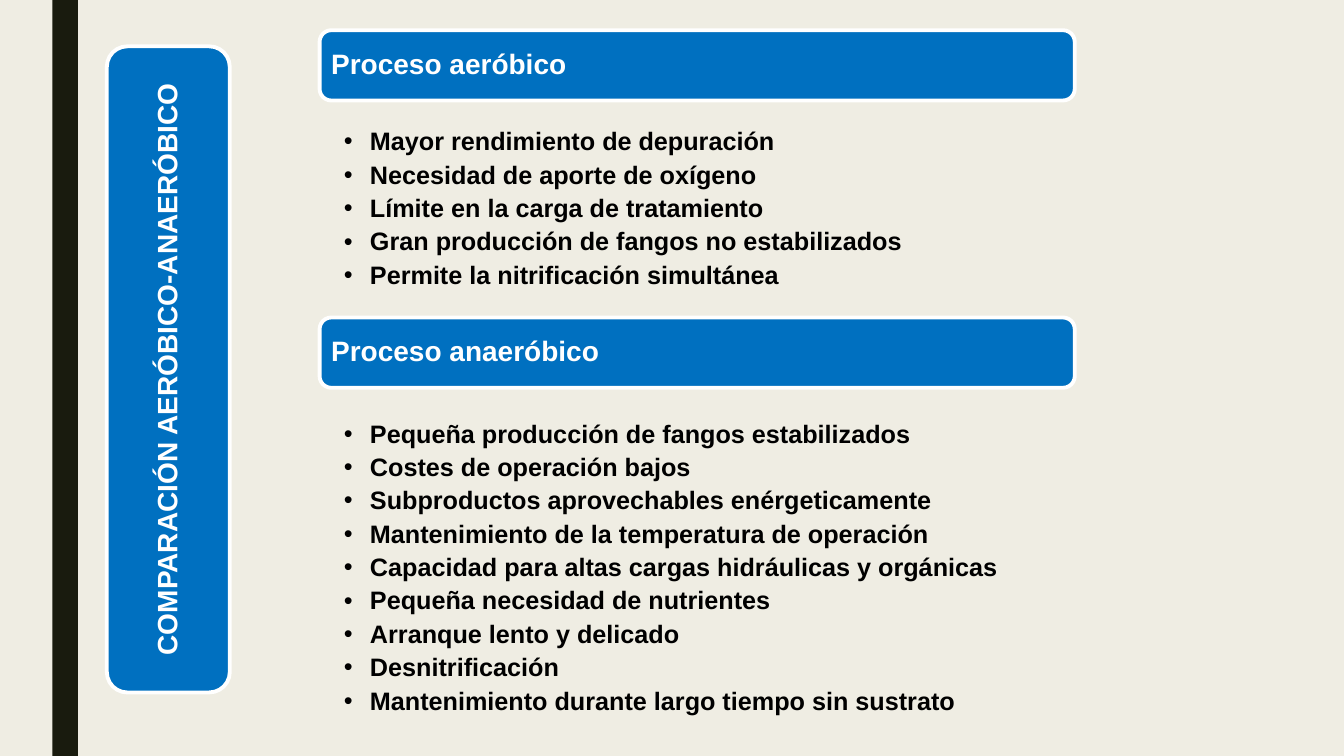
from dataclasses import dataclass

from lxml.etree import SubElement
from pptx import Presentation
from pptx.dml.color import RGBColor
from pptx.enum.shapes import MSO_SHAPE as Shape
from pptx.enum.text import MSO_ANCHOR as Anchor, PP_ALIGN as Align
from pptx.oxml.ns import qn
from pptx.util import Inches, Pt


@dataclass(frozen=True)
class Theme:
    font: str = "Arial"
    background: str = "EFEDE3"
    stripe: str = "191B0E"
    panel: str = "0070C0"
    light: str = "FFFFFF"
    dark: str = "000000"
    heading_size: float = 20
    bullet_size: float = 18
    bullet_gap: float = 4.4
    outline: float = 2.75


@dataclass(frozen=True)
class Area:
    """A rectangle in percent of the slide's width and height."""
    left: float
    top: float
    width: float
    height: float


@dataclass(frozen=True)
class Process:
    title: str
    header_top: float
    list_top: float
    traits: tuple[str, ...]


THEME = Theme()
SLIDE_WIDTH, SLIDE_HEIGHT = Inches(13.33), Inches(7.5)
CONTENT_LEFT, CONTENT_WIDTH = 23.78, 56.19
HEADER_HEIGHT, TRAIT_HEIGHT = 9.3, 4.27
PANEL_INSET = Inches(0.08)
BULLET_INDENT = Inches(0.26)

STRIPE = Area(3.9, 0, 1.9, 100)
TITLE_PANEL = Area(7.95, 6.13, 9.15, 85.47)
TITLE = "COMPARACIÓN AERÓBICO-ANAERÓBICO"

PROCESSES = (
    Process("Proceso aeróbico", 4, 16.67, (
        "Mayor rendimiento de depuración",
        "Necesidad de aporte de oxígeno",
        "Límite en la carga de tratamiento",
        "Gran producción de fangos no estabilizados",
        "Permite la nitrificación simultánea",
    )),
    Process("Proceso anaeróbico", 42, 55.33, (
        "Pequeña producción de fangos estabilizados",
        "Costes de operación bajos",
        "Subproductos aprovechables enérgeticamente",
        "Mantenimiento de la temperatura de operación",
        "Capacidad para altas cargas hidráulicas y orgánicas",
        "Pequeña necesidad de nutrientes",
        "Arranque lento y delicado",
        "Desnitrificación",
        "Mantenimiento durante largo tiempo sin sustrato",
    )),
)


def place(area: Area) -> tuple[int, int, int, int]:
    """Turn percentages into left, top, width and height on the slide."""
    return (int(SLIDE_WIDTH * area.left / 100), int(SLIDE_HEIGHT * area.top / 100),
            int(SLIDE_WIDTH * area.width / 100), int(SLIDE_HEIGHT * area.height / 100))


def write(para, text: str, *, size: float, color: str,
          align: Align = Align.LEFT, gap: float = 0, bullet: bool = False) -> None:
    para.alignment = align
    para.line_spacing = 0.9
    para.space_after = Pt(gap)
    run = para.add_run()
    run.text = text
    run.font.name = THEME.font
    run.font.size = Pt(size)
    run.font.bold = True
    run.font.color.rgb = RGBColor.from_string(color)
    if bullet:
        properties = para._p.get_or_add_pPr()
        properties.set("marL", str(BULLET_INDENT))
        properties.set("indent", str(-BULLET_INDENT))
        SubElement(properties, qn("a:buFont"), typeface=THEME.font)
        SubElement(properties, qn("a:buChar"), char="•")


def add_block(page, kind: Shape, area: Area, color: str):
    block = page.shapes.add_shape(kind, *place(area))
    block.shadow.inherit = False
    block.fill.solid()
    block.fill.fore_color.rgb = RGBColor.from_string(color)
    block.line.fill.background()
    return block


def add_panel(page, area: Area, text: str, *, align: Align = Align.LEFT,
              upward: bool = False) -> None:
    """Draw a rounded, outlined panel; its text may run upward."""
    panel = add_block(page, Shape.ROUNDED_RECTANGLE, area, THEME.panel)
    panel.line.color.rgb = RGBColor.from_string(THEME.light)
    panel.line.width = Pt(THEME.outline)
    frame = panel.text_frame
    frame.word_wrap = True
    frame.vertical_anchor = Anchor.MIDDLE
    frame.margin_left = frame.margin_right = PANEL_INSET
    frame.margin_top = frame.margin_bottom = PANEL_INSET
    if upward:
        panel.element.txBody.bodyPr.set("vert", "vert270")
    write(frame.paragraphs[0], text, size=THEME.heading_size,
          color=THEME.light, align=align)


def add_traits(page, area: Area, traits: tuple[str, ...]) -> None:
    frame = page.shapes.add_textbox(*place(area)).text_frame
    frame.word_wrap = True
    frame.margin_left, frame.margin_right = Inches(0.24), Inches(0.14)
    frame.margin_top = frame.margin_bottom = Inches(0.03)
    for index, trait in enumerate(traits):
        para = frame.add_paragraph() if index else frame.paragraphs[0]
        write(para, trait, size=THEME.bullet_size, color=THEME.dark,
              gap=THEME.bullet_gap, bullet=True)


def main() -> None:
    deck = Presentation()
    deck.slide_width, deck.slide_height = SLIDE_WIDTH, SLIDE_HEIGHT
    page = deck.slides.add_slide(deck.slide_layouts[6])
    page.background.fill.solid()
    page.background.fill.fore_color.rgb = RGBColor.from_string(THEME.background)

    add_block(page, Shape.RECTANGLE, STRIPE, THEME.stripe)
    add_panel(page, TITLE_PANEL, TITLE, align=Align.CENTER, upward=True)
    for process in PROCESSES:
        add_panel(page, Area(CONTENT_LEFT, process.header_top, CONTENT_WIDTH,
                             HEADER_HEIGHT), process.title)
        add_traits(page, Area(CONTENT_LEFT, process.list_top, CONTENT_WIDTH,
                              TRAIT_HEIGHT * len(process.traits)), process.traits)
    deck.save("out.pptx")


if __name__ == "__main__":
    main()
